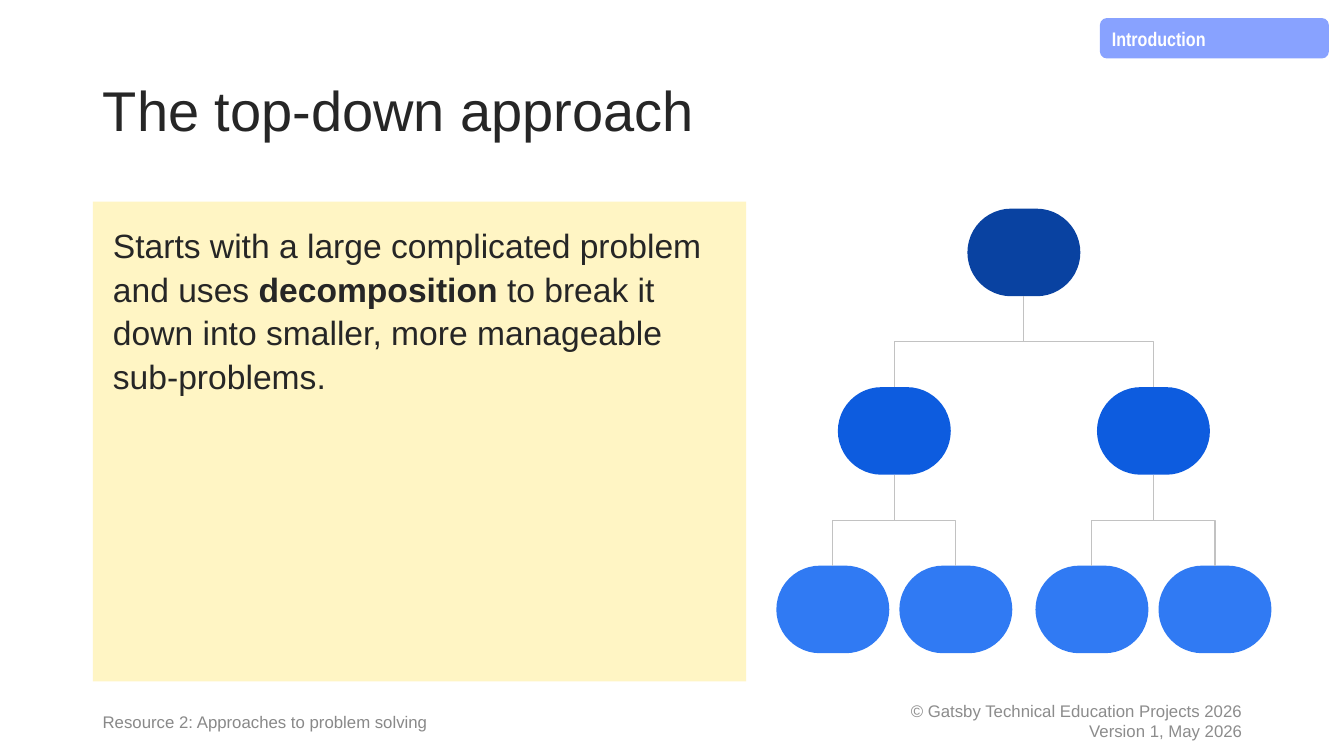
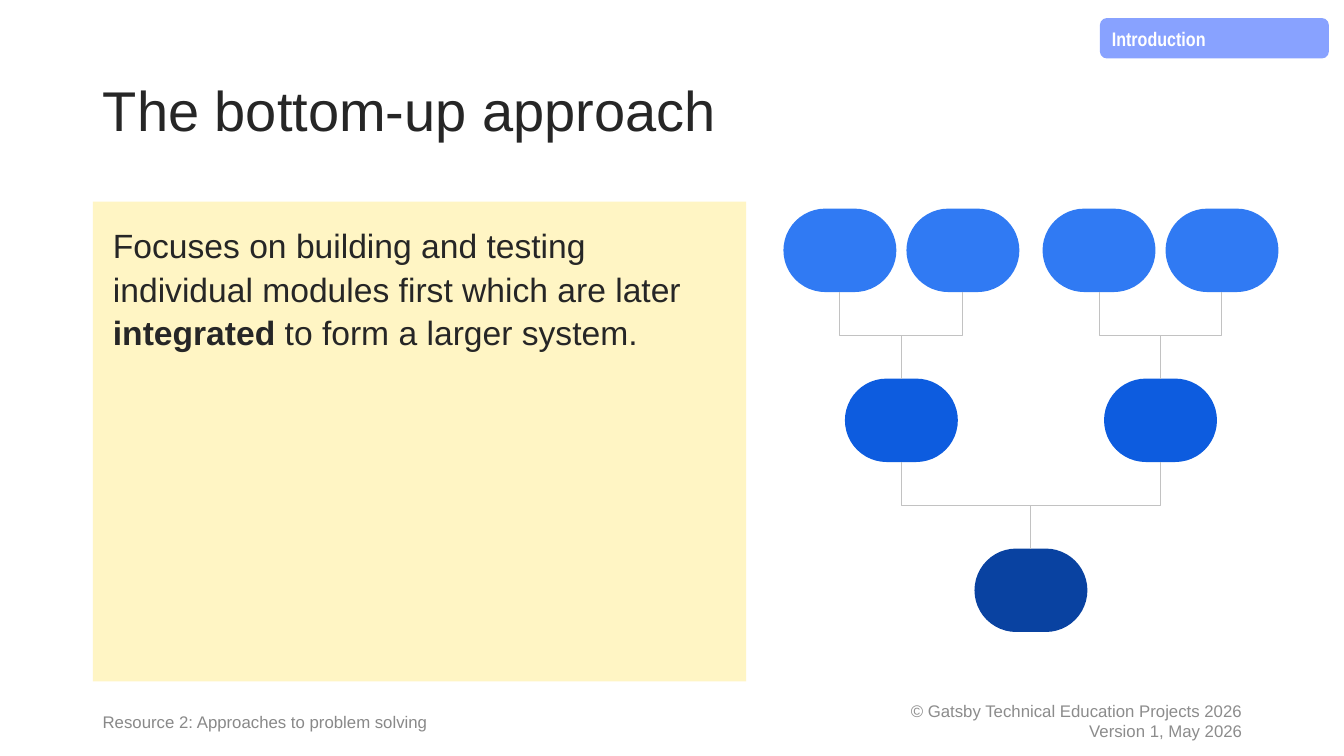
import dataclasses

import pptx
import pptx.dml.color
import pptx.enum.shapes
import pptx.enum.text
import pptx.oxml.ns
import pptx.util
from lxml import etree

Inches = pptx.util.Inches
Shape = pptx.enum.shapes.MSO_SHAPE
Anchor = pptx.enum.text.MSO_ANCHOR
Align = pptx.enum.text.PP_ALIGN


@dataclasses.dataclass(frozen=True)
class Theme:
    font: str = "Arial"
    label_font: str = "Arial Narrow"
    title_size: int = 40
    body_size: int = 24
    label_size: int = 14
    footer_size: int = 12
    ink: str = "262626"
    white: str = "FFFFFF"
    panel: str = "FFF5C4"
    label: str = "88A2FF"
    footer: str = "898989"
    copyright: str = "8C8C8C"
    line: str = "C2C2C2"
    levels: tuple = ("0942A1", "0D5CDF", "307AF3")
    line_width: float = 0.75
    title_spacing: float = 0.9
    body_spacing: float = 1.08


THEME = Theme()

# Boxes are left, top, width, height in inches.
TITLE_BOX = (0.92, 0.4, 11.5, 1.45)
PANEL_BOX = (0.92, 2, 6.48, 4.76)
LABEL_BOX = (10.91, 0.18, 2.27, 0.4)
RESOURCE_BOX = (0.92, 6.95, 4.6, 0.4)
COPYRIGHT_BOX = (7.92, 6.95, 4.5, 0.4)

NODE_WIDTH = 1.12
NODE_HEIGHT_SHARE = 0.197
LEAF_OFFSET = 0.61
TOP_SITE, BOTTOM_SITE = 0, 2

SLIDES = (
    {
        "title": "The top-down approach",
        "body": (
            ("Starts with a large complicated problem and uses ", False),
            ("decomposition", True),
            (" to break it down into smaller, more manageable sub-problems.", False),
        ),
        "tree_box": (7.7, 2.07, 4.91, 4.41),
        "root_on_top": True,
    },
    {
        "title": "The bottom-up approach",
        "body": (
            ("Focuses on building and testing individual modules first which are later ", False),
            ("integrated", True),
            (" to form a larger system.", False),
        ),
        "tree_box": (7.77, 2.07, 4.91, 4.2),
        "root_on_top": False,
    },
)


def rgb(color):
    return pptx.dml.color.RGBColor.from_string(color)


def style_text(shape, size, color, font=THEME.font, bold=None, align=Align.LEFT,
               anchor=Anchor.MIDDLE, spacing=1.0):
    frame = shape.text_frame
    frame.word_wrap = True
    frame.vertical_anchor = anchor
    for para in frame.paragraphs:
        para.alignment = align
        para.line_spacing = spacing
        for span in para.runs:
            span.font.name = font
            span.font.size = pptx.util.Pt(size)
            span.font.color.rgb = rgb(color)
            if bold is not None:
                span.font.bold = bold


def add_filled_shape(page, kind, box, color):
    shape = page.shapes.add_shape(kind, *map(Inches, box))
    shape.shadow.inherit = False
    shape.fill.solid()
    shape.fill.fore_color.rgb = rgb(color)
    shape.line.fill.background()
    return shape


def add_title(page, text, box):
    title = page.shapes.title
    title.left, title.top, title.width, title.height = map(Inches, box)
    title.text_frame.text = text
    style_text(title, THEME.title_size, THEME.ink, spacing=THEME.title_spacing)


def add_panel(page, spans, box):
    panel = add_filled_shape(page, Shape.RECTANGLE, box, THEME.panel)
    frame = panel.text_frame
    frame.margin_left = frame.margin_right = Inches(0.2)
    frame.margin_top = frame.margin_bottom = Inches(0.2)
    for text, bold in spans:
        span = frame.paragraphs[0].add_run()
        span.text = text
        span.font.bold = bold
    style_text(panel, THEME.body_size, THEME.ink, anchor=Anchor.TOP,
               spacing=THEME.body_spacing)


def add_section_label(page, text, box):
    label = add_filled_shape(page, Shape.FLOWCHART_ALTERNATE_PROCESS, box, THEME.label)
    label.text_frame.text = text
    style_text(label, THEME.label_size, THEME.white, font=THEME.label_font, bold=True,
               anchor=Anchor.TOP, spacing=THEME.body_spacing)


def add_footer(page, text, box, color, **style):
    footer = page.shapes.add_textbox(*map(Inches, box))
    footer.text_frame.text = text
    style_text(footer, THEME.footer_size, color, **style)


def connect(page, upper, lower):
    """Join the bottom of the upper node to the top of the lower one by an elbow."""
    upper_x, upper_y = upper.left + upper.width // 2, upper.top + upper.height
    lower_x, lower_y = lower.left + lower.width // 2, lower.top
    falls_right = upper_x < lower_x
    ends = [(upper, BOTTOM_SITE), (lower, TOP_SITE)]
    if not falls_right:
        ends.reverse()
    elbow = page.shapes.add_connector(
        pptx.enum.shapes.MSO_CONNECTOR.ELBOW, upper_x, upper_y, lower_x, lower_y)
    elbow.begin_connect(*ends[0])
    elbow.end_connect(*ends[1])
    elbow.line.color.rgb = rgb(THEME.line)
    elbow.line.width = pptx.util.Pt(THEME.line_width)

    # A quarter turn makes the elbow leave and arrive vertically.
    drop, run = lower_y - upper_y, abs(lower_x - upper_x)
    elbow.width, elbow.height = drop, run
    elbow.left = (upper_x + lower_x - drop) // 2
    elbow.top = (upper_y + lower_y - run) // 2
    properties = elbow._element.spPr
    transform = properties.find(pptx.oxml.ns.qn("a:xfrm"))
    transform.set("rot", str(270 * 60000))
    transform.set("flipH", "1" if falls_right else "0")
    transform.set("flipV", "0")
    etree.SubElement(properties, pptx.oxml.ns.qn("a:effectLst"))


def add_tree(page, box, root_on_top):
    """Draw a three-level binary tree that fills the box."""
    left, top, width, height = box
    node_height = height * NODE_HEIGHT_SHARE
    pitch = (height - node_height) / 2
    branch_offset = (width - NODE_WIDTH) / 2 - LEAF_OFFSET
    offsets = (branch_offset, LEAF_OFFSET)

    def add_branch(center, level):
        row = level if root_on_top else len(offsets) - level
        node_box = (center - NODE_WIDTH / 2, top + row * pitch, NODE_WIDTH, node_height)
        node = add_filled_shape(page, Shape.ROUNDED_RECTANGLE, node_box, THEME.levels[level])
        node.adjustments[0] = 0.5
        if level < len(offsets):
            for side in (-1, 1):
                child = add_branch(center + side * offsets[level], level + 1)
                connect(page, *((node, child) if root_on_top else (child, node)))
        return node

    add_branch(left + width / 2, 0)


def add_approach_slide(deck, title, body, tree_box, root_on_top):
    page = deck.slides.add_slide(deck.slide_layouts[5])
    add_title(page, title, TITLE_BOX)
    add_panel(page, body, PANEL_BOX)
    add_section_label(page, "Introduction", LABEL_BOX)
    add_footer(page, "Resource 2: Approaches to problem solving", RESOURCE_BOX,
               THEME.footer, spacing=THEME.body_spacing)
    add_footer(page, "© Gatsby Technical Education Projects 2026\nVersion 1, May 2026",
               COPYRIGHT_BOX, THEME.copyright, align=Align.RIGHT)
    add_tree(page, tree_box, root_on_top)


def main():
    deck = pptx.Presentation()
    deck.slide_width, deck.slide_height = Inches(13.33), Inches(7.5)
    for content in SLIDES:
        add_approach_slide(deck, **content)
    deck.save("out.pptx")


if __name__ == "__main__":
    main()
